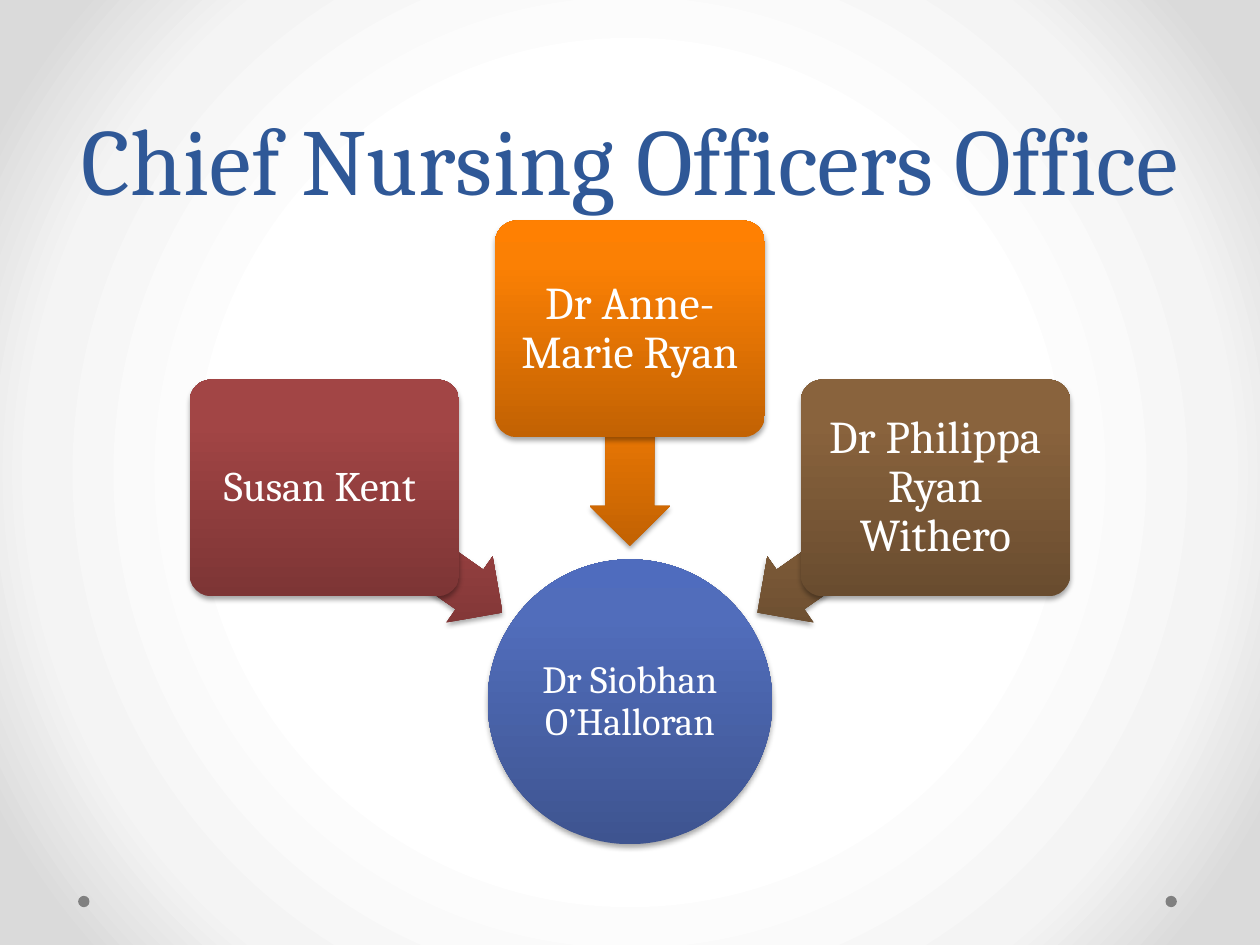
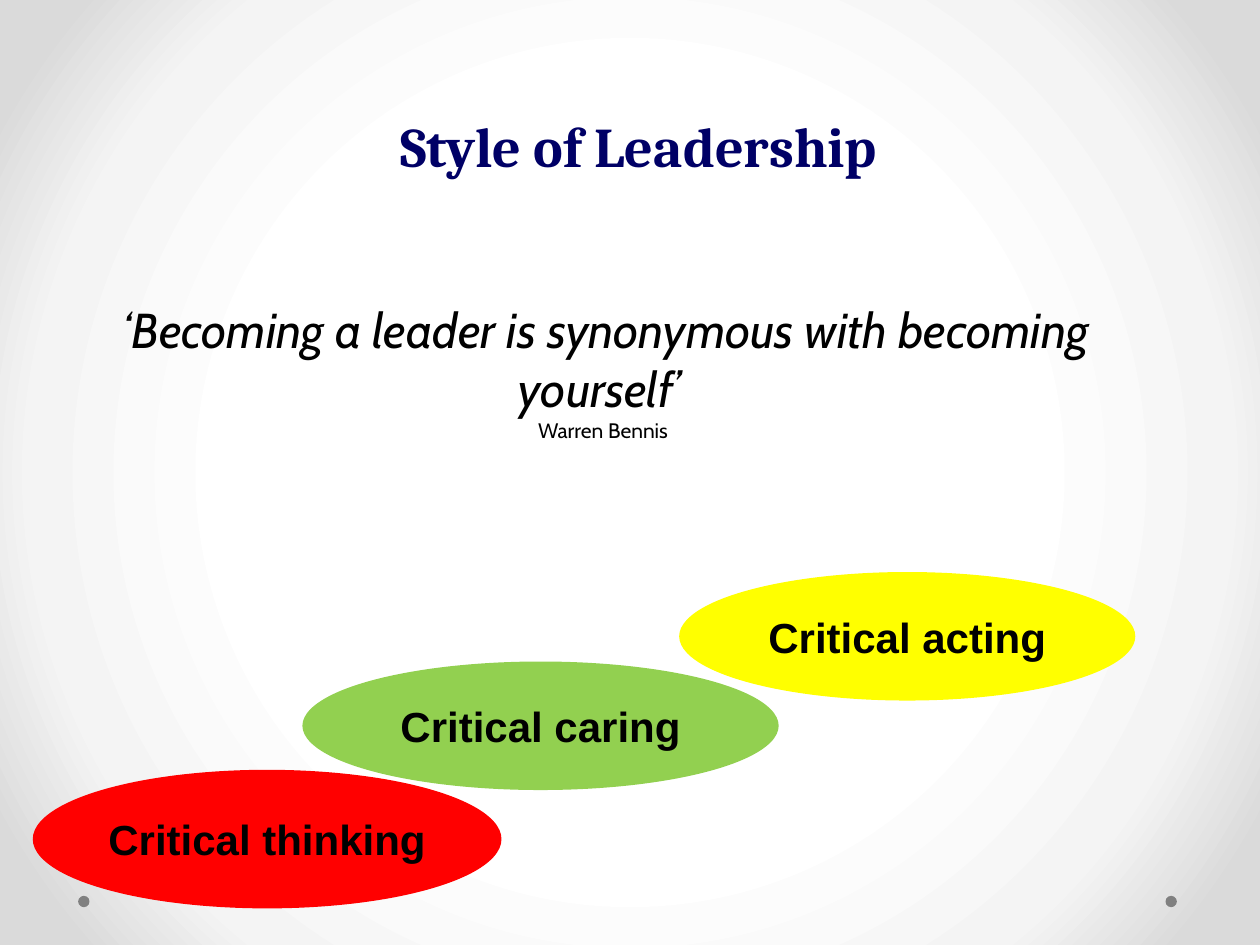
from math import cos, radians, sin

from pptx import Presentation
from pptx.dml.color import RGBColor
from pptx.enum.shapes import MSO_SHAPE
from pptx.enum.text import MSO_ANCHOR, MSO_AUTO_SIZE, PP_ALIGN
from pptx.oxml import parse_xml
from pptx.oxml.ns import nsdecls, qn
from pptx.util import Inches, Pt

OVAL = MSO_SHAPE.OVAL
CARD = MSO_SHAPE.ROUNDED_RECTANGLE
ARROW = MSO_SHAPE.LEFT_ARROW
CENTER = PP_ALIGN.CENTER
MIDDLE = MSO_ANCHOR.MIDDLE
BOTTOM = MSO_ANCHOR.BOTTOM
NO_AUTOFIT = MSO_AUTO_SIZE.NONE
TITLE_ONLY = 5

COLORS = {
    "dot": "808080",
    "title": "2F5897",
    "navy": "000066",
    "white": "FFFFFF",
    "black": "000000",
    "red": "FF0000",
    "yellow": "FFFF00",
    "green": "92D050",
}
BACKDROP = [(50, "FFFFFF"), (76, "F4F4F4"), (92, "DADADA")]
GRADIENTS = {
    "blue": [(0, "3E5490"), (80, "516DBB"), (100, "4F6CBE")],
    "maroon": [(0, "7D3535"), (80, "A24545"), (100, "A44343")],
    "orange": [(0, "C26203"), (80, "FB8004"), (100, "FF8002")],
    "brown": [(0, "694C2F"), (80, "89633D"), (100, "8B633C")],
}
UPWARD = '<a:lin ang="16200000" scaled="0"/>'
RADIAL = ('<a:path path="circle">'
          '<a:fillToRect l="50000" t="50000" r="50000" b="50000"/></a:path>')
SOFT_SHADOW = (
    f'<a:effectLst {nsdecls("a")}>'
    f'<a:outerShdw blurRad="{Pt(3.1)}" dist="{Pt(1.8)}" dir="5400000" rotWithShape="0">'
    '<a:srgbClr val="000000"><a:alpha val="35000"/></a:srgbClr>'
    '</a:outerShdw></a:effectLst>')

TITLE_FONT = {"name": "Cambria", "size": Pt(54), "bold": False}
SUBTITLE_FONT = {"name": "Cambria", "size": Pt(32), "bold": True}
STEP_FONT = {"name": "Arial", "size": Pt(24), "bold": True}
QUOTE_FONT = {"name": "Cabin", "size": Pt(28), "italic": True}
AUTHOR_FONT = {"name": "Cabin", "size": Pt(12), "italic": False}


def apply_format(target, values):
    for attribute, value in values.items():
        setattr(target, attribute, value)


def set_gradient(fill, host, stops, direction):
    fill.gradient()
    current = next(host.iter(qn("a:gradFill")))
    marks = "".join(f'<a:gs pos="{at * 1000}"><a:srgbClr val="{color}"/></a:gs>'
                    for at, color in stops)
    current.getparent().replace(current, parse_xml(
        f'<a:gradFill {nsdecls("a")} rotWithShape="0">'
        f'<a:gsLst>{marks}</a:gsLst>{direction}</a:gradFill>'))


def write(paragraph, text, font, color, **layout):
    run = paragraph.add_run()
    run.text = text
    apply_format(run.font, font)
    run.font.color.rgb = RGBColor.from_string(COLORS[color])
    apply_format(paragraph, {"alignment": CENTER, **layout})


def add_form(slide, form, box, color=None):
    shape = slide.shapes.add_shape(form, *map(Inches, box))
    shape.shadow.inherit = False
    shape.line.fill.background()
    if color:
        shape.fill.solid()
        shape.fill.fore_color.rgb = RGBColor.from_string(COLORS[color])
    return shape


def add_glossy(slide, form, center, size, gradient):
    (x, y), (width, height) = center, size
    shape = add_form(slide, form, (x - width / 2, y - height / 2, width, height))
    properties = shape.element.spPr
    set_gradient(shape.fill, properties, GRADIENTS[gradient], UPWARD)
    effects = properties.find(qn("a:effectLst"))
    properties.replace(effects, parse_xml(SOFT_SHADOW))
    return shape


def label_person(shape, name, size, inset):
    frame = shape.text_frame
    sides = ("margin_left", "margin_top", "margin_right", "margin_bottom")
    apply_format(frame, {"word_wrap": True, "vertical_anchor": MIDDLE,
                         **dict.fromkeys(sides, Inches(inset))})
    write(frame.paragraphs[0], name, {"name": "Cambria", "size": Pt(size)},
          "white", line_spacing=0.9)


def start_slide(deck, title, box, font, color):
    slide = deck.slides.add_slide(deck.slide_layouts[TITLE_ONLY])
    heading = slide.shapes.title
    apply_format(heading, dict(zip(("left", "top", "width", "height"), map(Inches, box))))
    apply_format(heading.text_frame, {"word_wrap": True, "vertical_anchor": BOTTOM,
                                      "auto_size": NO_AUTOFIT})
    write(heading.text_frame.paragraphs[0], title, font, color, line_spacing=Pt(58))
    for left in (9.25, 0.62):
        add_form(slide, OVAL, (left, 7.11, 0.09, 0.09), "dot")
    return slide


def draw_office(slide, box):
    left, top, width, height = box
    hub_size = 2.26
    hub_x, hub_y = left + width / 2, top + height - hub_size / 2

    def around(angle, radius):
        turn = radians(angle)
        return hub_x + radius * cos(turn), hub_y + radius * sin(turn)

    hub = add_glossy(slide, OVAL, (hub_x, hub_y), (hub_size, hub_size), "blue")
    label_person(hub, "Dr Siobhan O’Halloran", 22, 0.02)
    officers = [
        ("Susan Kent ", 24, 215, "maroon"),
        ("Dr Anne-Marie Ryan", 26, 270, "orange"),
        ("Dr Philippa Ryan Withero", 26, 325, "brown"),
    ]
    for name, size, angle, gradient in officers:
        arrow = add_glossy(slide, ARROW, around(angle, 2.1), (1.73, 0.64), gradient)
        arrow.rotation = angle
        arrow.adjustments[0] = 0.6
        arrow.adjustments[1] = 0.5
        card = add_glossy(slide, CARD, around(angle, 2.96), (2.14, 1.72), gradient)
        card.adjustments[0] = 0.1
        label_person(card, name, size, 0.05)


def draw_steps(slide, box):
    left, top = box[:2]
    steps = [
        ("Critical thinking", "red", (0, 1.57, 3.72, 1.1)),
        ("Critical acting", "yellow", (5.13, 0, 3.62, 1.02)),
        ("Critical caring", "green", (2.14, 0.71, 3.78, 1.02)),
    ]
    for text, color, (x, y, width, height) in steps:
        step = add_form(slide, OVAL, (left + x, top + y, width, height), color)
        apply_format(step.text_frame, {"word_wrap": False, "vertical_anchor": MIDDLE})
        write(step.text_frame.paragraphs[0], text, STEP_FONT, "black")


def draw_quote(slide, box):
    frame = slide.shapes.add_textbox(*map(Inches, box)).text_frame
    frame.word_wrap = True
    write(frame.paragraphs[0], "‘Becoming a leader is synonymous with becoming yourself’ ",
          QUOTE_FONT, "black")
    write(frame.add_paragraph(), "Warren Bennis ", AUTHOR_FONT, "black")


def main():
    deck = Presentation()
    deck.slide_width, deck.slide_height = Inches(10), Inches(7.5)
    master = deck.slide_master
    set_gradient(master.background.fill, master.element, BACKDROP, RADIAL)

    office = start_slide(deck, "Chief Nursing Officers Office ", (0.5, 0, 9, 1.75),
                         TITLE_FONT, "title")
    draw_office(office, (1.5, 1.75, 7, 4.95))

    leadership = start_slide(deck, "Style of Leadership", (0.57, 0.68, 9, 0.79),
                             SUBTITLE_FONT, "navy")
    draw_steps(leadership, (0.26, 4.54, 8.75, 2.67))
    draw_quote(leadership, (0.67, 2.33, 8.27, 1.25))
    deck.save("out.pptx")


if __name__ == "__main__":
    main()
